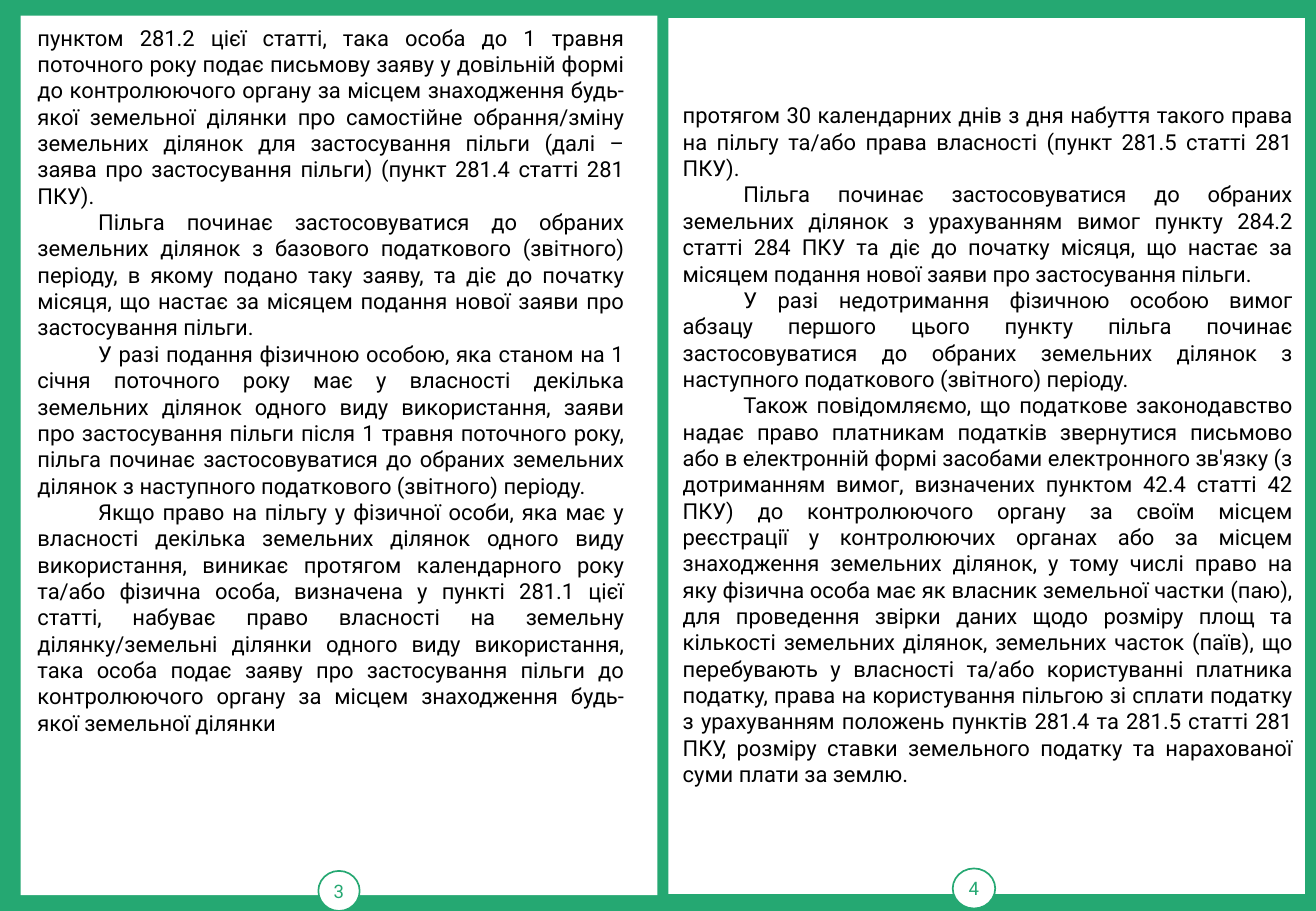
import dataclasses

import pptx
import pptx.dml.color
import pptx.enum.shapes
import pptx.enum.text
import pptx.util

Inches = pptx.util.Inches
Shape = pptx.enum.shapes.MSO_SHAPE
Align = pptx.enum.text.PP_ALIGN
Anchor = pptx.enum.text.MSO_ANCHOR


@dataclasses.dataclass(frozen=True)
class Theme:
    font: str = "Roboto"
    green: str = "25A872"
    paper: str = "FFFFFF"
    ink: str = "000000"
    gray: str = "333333"
    body_size: int = 13
    mark_size: int = 12
    number_size: int = 11
    first_line: float = 0.5


class Booklet:
    def __init__(self, slide, theme):
        self.slide = slide
        self.theme = theme
        self.fill(slide.background.fill, theme.green)

    def fill(self, fill, color):
        fill.solid()
        fill.fore_color.rgb = pptx.dml.color.RGBColor.from_string(color)

    def format_paragraph(self, paragraph, size, color, alignment):
        paragraph.alignment = alignment
        for run in paragraph.runs:
            run.font.name = self.theme.font
            run.font.size = pptx.util.Pt(size)
            run.font.color.rgb = pptx.dml.color.RGBColor.from_string(color)

    def white_shape(self, group, kind, box):
        shape = group.shapes.add_shape(kind, *map(Inches, box))
        shape.shadow.inherit = False
        self.fill(shape.fill, self.theme.paper)
        shape.line.fill.background()
        return shape

    def page(self, number, sheet_box, badge_box):
        """Draw a white sheet with its round page number."""
        group = self.slide.shapes.add_group_shape()
        self.white_shape(group, Shape.RECTANGLE, sheet_box)
        badge = self.white_shape(group, Shape.OVAL, badge_box)
        self.fill(badge.line.fill, self.theme.green)
        badge.line.width = pptx.util.Pt(1)
        frame = badge.text_frame
        frame.margin_left = frame.margin_right = 0
        frame.margin_top = frame.margin_bottom = 0
        frame.vertical_anchor = Anchor.MIDDLE
        frame.text = number
        self.format_paragraph(frame.paragraphs[0], self.theme.number_size,
                              self.theme.green, Align.CENTER)

    def text(self, box, paragraphs, anchor, size, color, indent_first=False):
        """Add justified paragraphs; the first one may continue a previous page."""
        frame = self.slide.shapes.add_textbox(*map(Inches, box)).text_frame
        frame.word_wrap = True
        frame.vertical_anchor = anchor
        frame.text = "\n".join(paragraphs)
        for index, paragraph in enumerate(frame.paragraphs):
            self.format_paragraph(paragraph, size, color, Align.JUSTIFY)
            if index or indent_first:
                properties = paragraph._p.get_or_add_pPr()
                properties.set("marL", "0")
                properties.set("indent", str(Inches(self.theme.first_line)))
        return frame


LEFT_TEXT = [
    "пунктом 281.2 цієї статті, така особа до 1 травня поточного року подає "
    "письмову заяву у довільній формі до контролюючого органу за місцем "
    "знаходження будь-якої земельної ділянки про самостійне обрання/зміну "
    "земельних ділянок для застосування пільги (далі – заява про застосування "
    "пільги) (пункт 281.4 статті 281 ПКУ).",
    "Пільга починає застосовуватися до обраних земельних ділянок з базового "
    "податкового (звітного) періоду, в якому подано таку заяву, та діє до "
    "початку місяця, що настає за місяцем подання нової заяви про застосування "
    "пільги.",
    "У разі подання фізичною особою, яка станом на 1 січня поточного року має у "
    "власності декілька земельних ділянок одного виду використання, заяви про "
    "застосування пільги після 1 травня поточного року, пільга починає "
    "застосовуватися до обраних земельних ділянок з наступного податкового "
    "(звітного) періоду.",
    "Якщо право на пільгу у фізичної особи, яка має у власності декілька "
    "земельних ділянок одного виду використання, виникає протягом календарного "
    "року та/або фізична особа, визначена у пункті 281.1 цієї статті, набуває "
    "право власності на земельну ділянку/земельні ділянки одного виду "
    "використання, така особа подає заяву про застосування пільги до "
    "контролюючого органу за місцем знаходження будь-якої земельної ділянки",
]
RIGHT_TEXT = [
    "протягом 30 календарних днів з дня набуття такого права на пільгу та/або "
    "права власності (пункт 281.5 статті 281 ПКУ).",
    "Пільга починає застосовуватися до обраних земельних ділянок з урахуванням "
    "вимог пункту 284.2 статті 284 ПКУ та діє до початку місяця, що настає за "
    "місяцем подання нової заяви про застосування пільги.",
    "У разі недотримання фізичною особою вимог абзацу першого цього пункту "
    "пільга починає застосовуватися до обраних земельних ділянок з наступного "
    "податкового (звітного) періоду.",
    "Також повідомляємо, що податкове законодавство надає право платникам "
    "податків звернутися письмово або в електронній формі засобами електронного "
    "зв'язку (з дотриманням вимог, визначених пунктом 42.4 статті 42 ПКУ) до "
    "контролюючого органу за своїм місцем реєстрації у контролюючих органах або "
    "за місцем знаходження земельних ділянок, у тому числі право на яку фізична "
    "особа має як власник земельної частки (паю), для проведення звірки даних "
    "щодо розміру площ та кількості земельних ділянок, земельних часток (паїв), "
    "що перебувають у власності та/або користуванні платника податку, права на "
    "користування пільгою зі сплати податку з урахуванням положень пунктів 281.4 "
    "та 281.5 статті 281 ПКУ, розміру ставки земельного податку та нарахованої "
    "суми плати за землю.",
]


def main():
    presentation = pptx.Presentation()
    presentation.slide_width = Inches(10.83)
    presentation.slide_height = Inches(7.5)
    slide = presentation.slides.add_slide(presentation.slide_layouts[6])
    theme = Theme()
    booklet = Booklet(slide, theme)

    booklet.page("3", (0.17, 0.13, 5.24, 7.24), (2.62, 7.17, 0.34, 0.33))
    booklet.page("4", (5.5, 0.15, 5.24, 7.21), (7.84, 7.15, 0.35, 0.33))

    mark = booklet.text((5.61, 0.23, 5.02, 6.84), ["."], Anchor.MIDDLE,
                        theme.mark_size, theme.gray, indent_first=True)
    mark.paragraphs[0].line_spacing = 1.15
    booklet.text((5.52, 0.11, 5.21, 7.1), RIGHT_TEXT, Anchor.MIDDLE,
                 theme.body_size, theme.ink)
    booklet.text((0.21, 0.15, 5.02, 7.32), LEFT_TEXT, Anchor.TOP,
                 theme.body_size, theme.ink)

    presentation.save("out.pptx")


if __name__ == "__main__":
    main()
